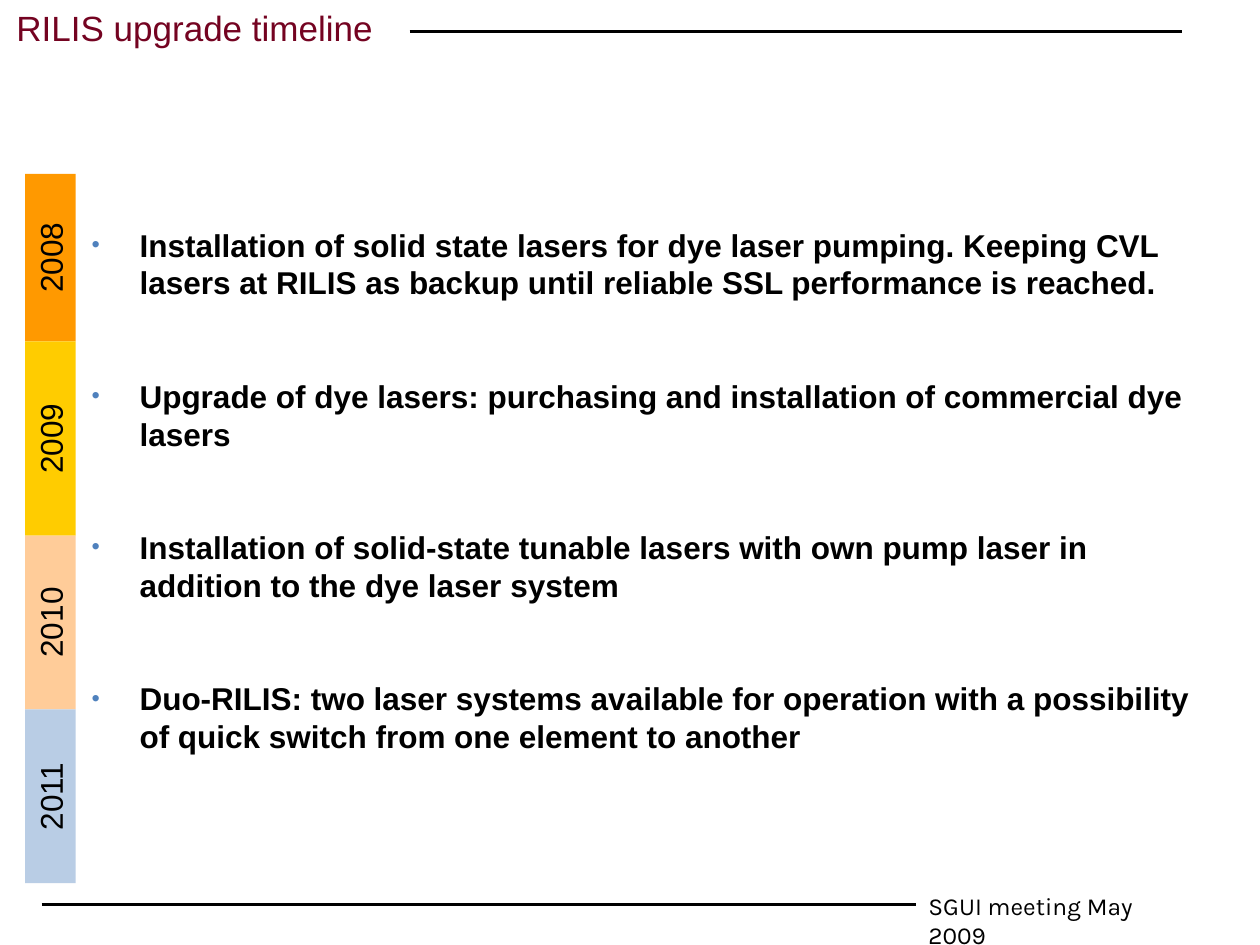
import pptx
import pptx.util
import pptx.dml.color
import pptx.enum.shapes
import pptx.enum.text
from lxml import etree

Inches, Pt = pptx.util.Inches, pptx.util.Pt
RGBColor = pptx.dml.color.RGBColor
ALIGN = pptx.enum.text.PP_ALIGN
ANCHOR = pptx.enum.text.MSO_ANCHOR

BLACK = RGBColor(0x00, 0x00, 0x00)
MAROON = RGBColor(0x74, 0x03, 0x21)
BULLET_BLUE = RGBColor(0x4F, 0x81, 0xBD)

BODY = {"name": "Arial", "size": Pt(18), "bold": True}
YEAR = {"name": "Arial", "size": Pt(18)}
TITLE = {"name": "Arial", "size": Pt(20), "bold": False}
FOOTER = {"name": "Karla", "size": Pt(14)}

YEARS = [
    ("2008", 1.33, RGBColor(0xFF, 0x99, 0x00)),
    ("2009", 1.54, RGBColor(0xFF, 0xCC, 0x00)),
    ("2010", 1.38, RGBColor(0xFF, 0xCC, 0x99)),
    ("2011", 1.38, RGBColor(0xB9, 0xCD, 0xE5)),
]
BAR_LEFT, BAR_TOP, BAR_WIDTH = 0.2, 1.38, 0.4

MILESTONES = [
    "Installation of solid state lasers for dye laser pumping. Keeping CVL "
    "lasers at RILIS as backup until reliable SSL performance is reached.",
    "Upgrade of dye lasers: purchasing and installation of commercial dye lasers",
    "Installation of solid-state tunable lasers with own pump laser in "
    "addition to the dye laser system",
    "Duo-RILIS: two laser systems available for operation with a possibility "
    "of quick switch from one element to another",
]
LINE_PITCH = 21.6


def set_font(font, style, color=BLACK):
    for name, value in style.items():
        setattr(font, name, value)
    font.color.rgb = color


def write(p, text, style, color=BLACK):
    r = p.add_run()
    r.text = text
    set_font(r.font, style, color)


def add_text_box(s, left, top, width, height):
    sp = s.shapes.add_textbox(Inches(left), Inches(top), Inches(width), Inches(height))
    sp.text_frame.word_wrap = True
    return sp.text_frame


def add_rule(s, left, right, y):
    line = s.shapes.add_connector(
        pptx.enum.shapes.MSO_CONNECTOR.STRAIGHT,
        Inches(left), Inches(y), Inches(right), Inches(y))
    line.line.color.rgb = BLACK
    line.line.width = Pt(1.75)
    etree.SubElement(line._element.spPr, pptx.oxml.ns.qn("a:effectLst"))


def add_bullet(p):
    """Give the paragraph a hanging small blue bullet."""
    pPr = p._p.get_or_add_pPr()
    pPr.set("marL", str(Inches(0.38)))
    pPr.set("indent", str(-Inches(0.38)))
    qn = pptx.oxml.ns.qn
    color = etree.SubElement(pPr, qn("a:buClr"))
    etree.SubElement(color, qn("a:srgbClr"), val=str(BULLET_BLUE))
    etree.SubElement(pPr, qn("a:buSzPct"), val="75000")
    etree.SubElement(pPr, qn("a:buFont"), typeface="Arial")
    etree.SubElement(pPr, qn("a:buChar"), char="•")


def add_title(s, text):
    sp = s.shapes.title
    sp.left, sp.top, sp.width, sp.height = (Inches(v) for v in (0.03, 0, 7.22, 0.43))
    tf = sp.text_frame
    tf.vertical_anchor = ANCHOR.MIDDLE
    tf.auto_size = pptx.enum.text.MSO_AUTO_SIZE.NONE
    p = tf.paragraphs[0]
    p.alignment = ALIGN.LEFT
    write(p, text, TITLE, MAROON)


def add_milestones(s):
    tf = add_text_box(s, 0.63, 1.44, 9.07, 5.46)
    tf.margin_top = Inches(0.35)
    for i, text in enumerate(MILESTONES):
        p = tf.paragraphs[0] if i == 0 else tf.add_paragraph()
        add_bullet(p)
        p.line_spacing = Pt(LINE_PITCH)
        if i:
            p.space_before = Pt(2 * LINE_PITCH)
        write(p, text, BODY)


def add_year(s, text, top, length, color):
    """Add a bar segment turned to read upwards; top and length are as seen."""
    left = BAR_LEFT + (BAR_WIDTH - length) / 2
    y = top + (length - BAR_WIDTH) / 2
    sp = s.shapes.add_shape(
        pptx.enum.shapes.MSO_SHAPE.RECTANGLE,
        Inches(left), Inches(y), Inches(length), Inches(BAR_WIDTH))
    sp.rotation = 270
    sp.shadow.inherit = False
    sp.fill.solid()
    sp.fill.fore_color.rgb = color
    sp.line.fill.background()
    tf = sp.text_frame
    tf.vertical_anchor = ANCHOR.TOP
    p = tf.paragraphs[0]
    p.alignment = ALIGN.CENTER
    write(p, text, YEAR)


def main():
    prs = pptx.Presentation()
    prs.slide_width, prs.slide_height = Inches(10), Inches(7.5)
    s = prs.slides.add_slide(prs.slide_layouts[5])

    footer = add_text_box(s, 7.27, 7.02, 2.21, 0.33)
    write(footer.paragraphs[0], "SGUI meeting May 2009", FOOTER)
    add_rule(s, 0.33, 7.27, 7.18)

    add_milestones(s)
    top = BAR_TOP
    for text, length, color in YEARS:
        add_year(s, text, top, length, color)
        top += length

    add_title(s, "RILIS upgrade timeline")
    add_rule(s, 3.25, 9.38, 0.25)
    prs.save("out.pptx")


if __name__ == "__main__":
    main()
